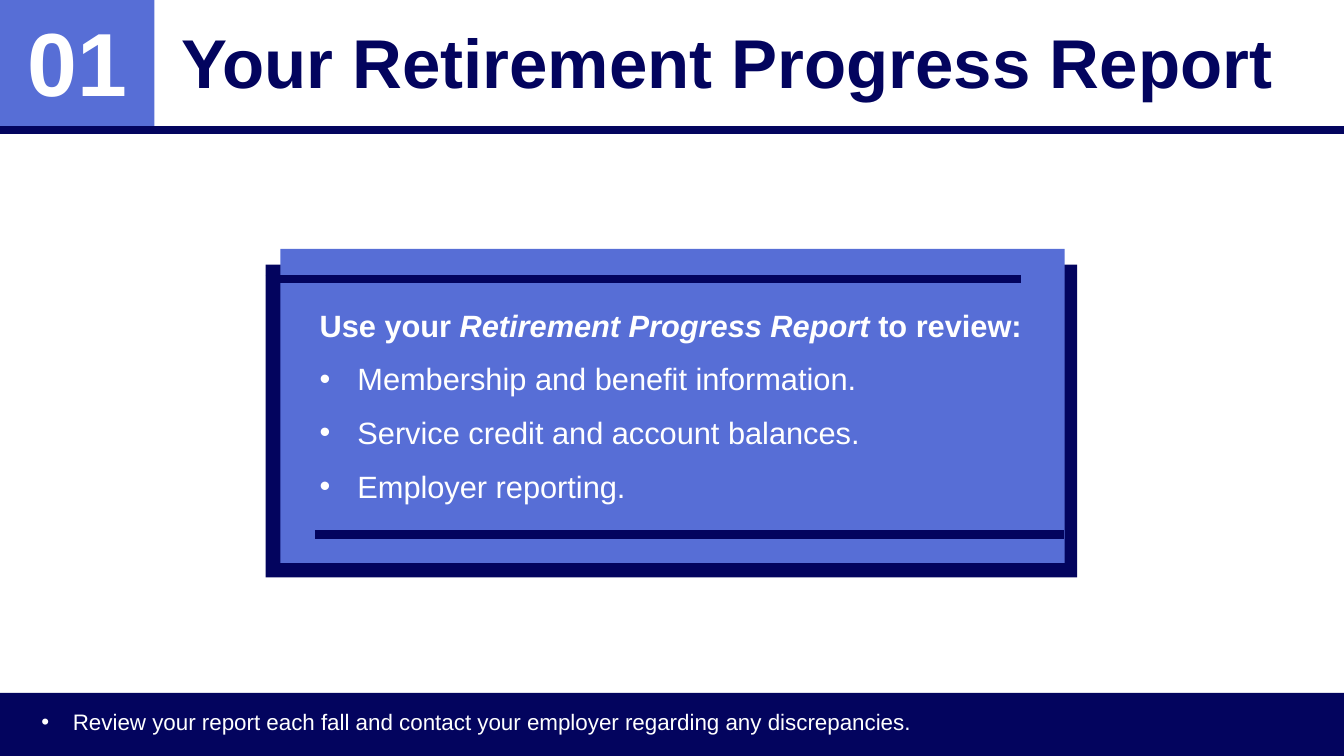
import pptx
import pptx.util
import pptx.dml.color
import pptx.enum.shapes
import pptx.enum.text
import pptx.oxml.ns
from lxml import etree

RGBColor = pptx.dml.color.RGBColor
PP_ALIGN = pptx.enum.text.PP_ALIGN
MSO_ANCHOR = pptx.enum.text.MSO_ANCHOR
qn = pptx.oxml.ns.qn

NAVY = RGBColor(0x03, 0x04, 0x5E)
BLUE = RGBColor(0x57, 0x6E, 0xD6)
WHITE = RGBColor(0xFF, 0xFF, 0xFF)
FONT = "Arial"
EMU_PER_PX = 9525


def px(*lengths):
    return [pptx.util.Emu(n * EMU_PER_PX) for n in lengths]


def add_rect(s, box, color):
    sp = s.shapes.add_shape(pptx.enum.shapes.MSO_SHAPE.RECTANGLE, *px(*box))
    sp.shadow.inherit = False
    sp.fill.solid()
    sp.fill.fore_color.rgb = color
    sp.line.fill.background()


def add_rule(s, x1, x2, y):
    straight = pptx.enum.shapes.MSO_CONNECTOR.STRAIGHT
    cx = s.shapes.add_connector(straight, *px(x1, y, x2, y))
    cx.line.color.rgb = NAVY
    cx.line.width = pptx.util.Pt(6)
    etree.SubElement(cx._element.spPr, qn("a:effectLst"))


def add_box(s, box, anchor=MSO_ANCHOR.TOP):
    tf = s.shapes.add_textbox(*px(*box)).text_frame
    tf.word_wrap = True
    tf.vertical_anchor = anchor
    return tf


def add_bullet(p, indent):
    pPr = p._p.get_or_add_pPr()
    pPr.set("marL", str(indent * EMU_PER_PX))
    pPr.set("indent", str(-indent * EMU_PER_PX))
    etree.SubElement(pPr, qn("a:buFont")).set("typeface", FONT)
    etree.SubElement(pPr, qn("a:buChar")).set("char", "•")


def add_text(p, text, size, color=WHITE, bold=False, italic=False):
    r = p.add_run()
    r.text = text
    r.font.name = FONT
    r.font.size = pptx.util.Pt(size)
    r.font.bold = bold
    r.font.italic = italic
    r.font.color.rgb = color


def add_header(s):
    add_rect(s, (0, 0, 147, 124), BLUE)
    p = add_box(s, (16, 18, 115, 92), MSO_ANCHOR.MIDDLE).paragraphs[0]
    p.alignment = PP_ALIGN.CENTER
    p.line_spacing = 0.9
    add_text(p, "01", 64, bold=True)
    add_rule(s, 0, 1280, 124)

    title = s.shapes.title
    title.left, title.top, title.width, title.height = px(163, 1, 1100, 124)
    tf = title.text_frame
    tf.word_wrap = True
    tf.auto_size = pptx.enum.text.MSO_AUTO_SIZE.NONE
    tf.vertical_anchor = MSO_ANCHOR.MIDDLE
    p = tf.paragraphs[0]
    p.alignment = PP_ALIGN.LEFT
    p.line_spacing = 0.9
    add_text(p, "Your Retirement Progress Report", 49.3, color=NAVY, bold=True)


def add_footer(s):
    add_rect(s, (0, 660, 1280, 60), NAVY)
    p = add_box(s, (30, 670, 930, 36)).paragraphs[0]
    add_bullet(p, 30)
    add_text(p, "Review your report each fall and contact your employer "
                "regarding any discrepancies.", 16)


def add_panel(s):
    add_rect(s, (253, 252, 773, 298), NAVY)
    add_rect(s, (267, 237, 747, 299), BLUE)
    tf = add_box(s, (295, 287, 702, 201))
    p = tf.paragraphs[0]
    add_text(p, "Use your ", 22, bold=True)
    add_text(p, "Retirement Progress Report ", 22, bold=True, italic=True)
    add_text(p, "to review:", 22, bold=True)
    for item in ("Membership and benefit information.",
                 "Service credit and account balances.",
                 "Employer reporting."):
        p = tf.add_paragraph()
        add_bullet(p, 36)
        add_text(p, item, 22)
    for p in tf.paragraphs:
        p.space_after = pptx.util.Pt(12)
    add_rule(s, 300, 1013, 509)
    add_rule(s, 253, 972, 266)


def main():
    prs = pptx.Presentation()
    prs.slide_width, prs.slide_height = px(1280, 720)
    s = prs.slides.add_slide(prs.slide_layouts[5])
    add_header(s)
    add_footer(s)
    add_panel(s)
    prs.save("out.pptx")


if __name__ == "__main__":
    main()
